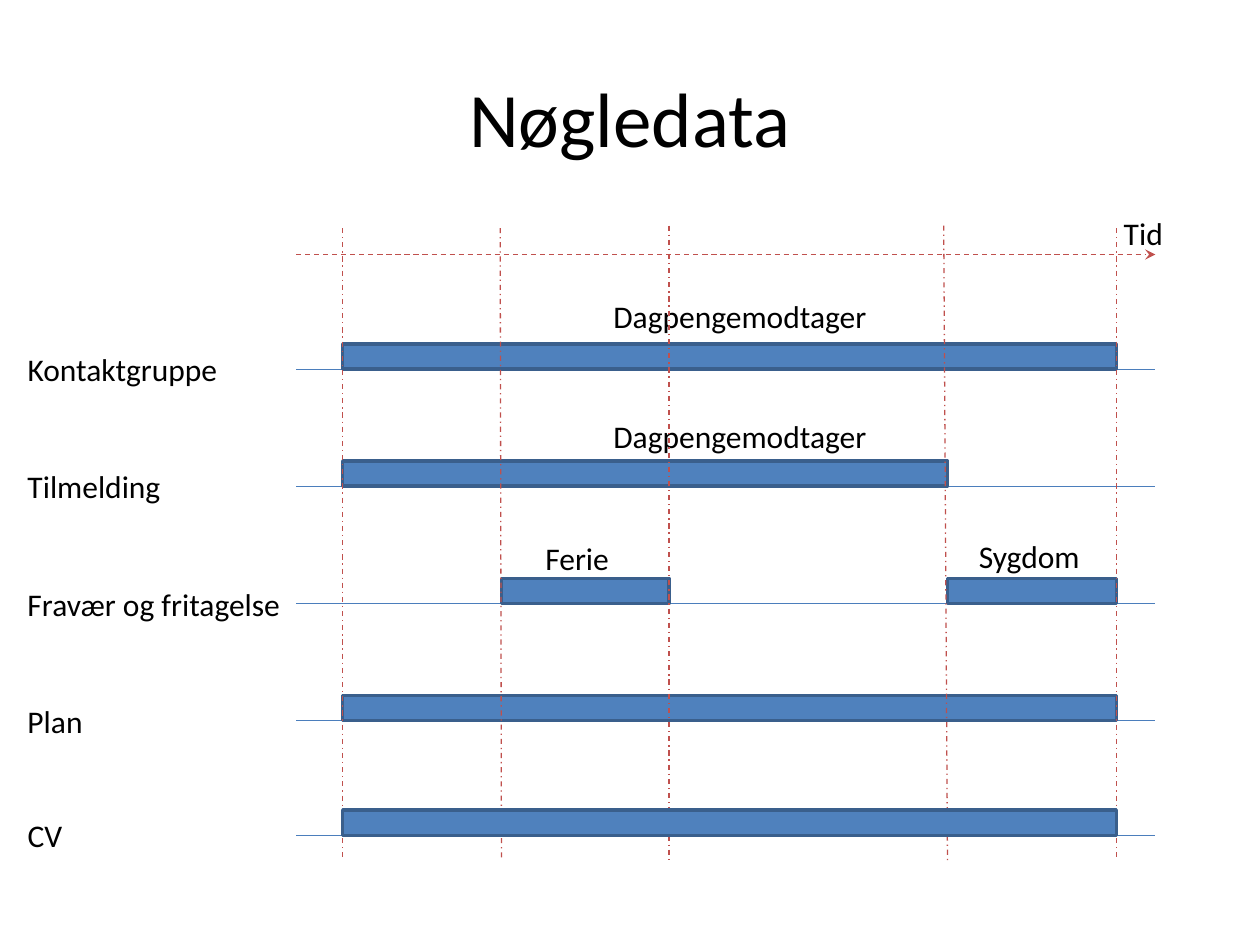
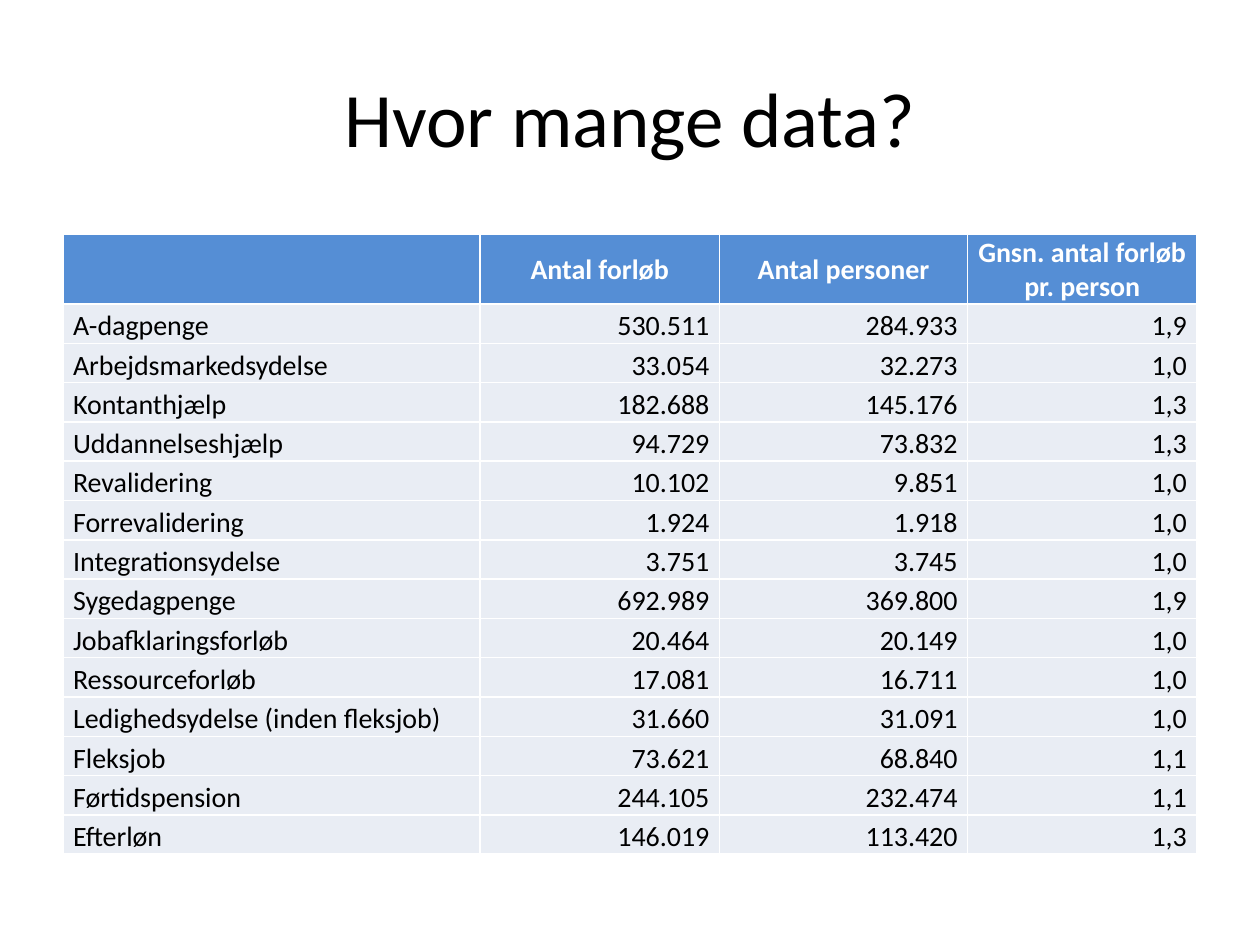
from dataclasses import dataclass

from lxml import etree
from pptx import Presentation
from pptx.dml.color import RGBColor
from pptx.enum.dml import MSO_LINE
from pptx.enum.shapes import MSO_CONNECTOR, MSO_SHAPE
from pptx.enum.text import MSO_ANCHOR, MSO_AUTO_SIZE, PP_ALIGN
from pptx.oxml.ns import qn
from pptx.util import Inches, Pt

LEFT, CENTER, RIGHT = PP_ALIGN.LEFT, PP_ALIGN.CENTER, PP_ALIGN.RIGHT
MIDDLE, BOTTOM = MSO_ANCHOR.MIDDLE, MSO_ANCHOR.BOTTOM
DASH, DASH_DOT = MSO_LINE.DASH, MSO_LINE.DASH_DOT
STRAIGHT, RECT = MSO_CONNECTOR.STRAIGHT, MSO_SHAPE.RECTANGLE
FIT = MSO_AUTO_SIZE.SHAPE_TO_FIT_TEXT
TITLE_ONLY = 5


@dataclass(frozen=True)
class Theme:
    font: str = "Calibri"
    ink: str = "000000"
    paper: str = "FFFFFF"
    bar: str = "4F81BD"
    edge: str = "3A5F8C"
    track: str = "4B7EBC"
    mark: str = "C0504D"
    head: str = "558ED5"
    body: str = "E9EDF4"
    title_pt: float = 44
    label_pt: float = 18
    cell_pt: float = 16
    thin: float = 0.75
    thick: float = 2


THEME = Theme()

# Boxes: left, top, width, height
TITLE_BOX = (0.5, 0.3, 9, 1.25)
TIME_BOX = (0.12, 1.65, 9.22, 5.18)
TABLE_BOX = (0.5, 1.86, 9, 4.83)

# Date marks, relative to the timeline box: top x, bottom x, top y
MARKS = [(2.6, 2.6, 0.16), (3.85, 3.86, 0.16), (5.19, 5.19, 0.14),
         (7.37, 7.4, 0.14), (8.74, 8.74, 0.16)]

# Rows: label, label width, nudge, bars (first mark, last mark),
# captions (text, x, rise above the track, width)
ROWS = [
    ("Kontaktgruppe", 1.72, 0, [(0, 4)],
     [("Dagpengemodtager", 4.65, 0.62, 2.24)]),
    ("Tilmelding", 1.27, 0, [(0, 3)],
     [("Dagpengemodtager", 4.65, 0.6, 2.24)]),
    ("Fravær og fritagelse", 2.23, 0, [(1, 2), (3, 4)],
     [("Ferie", 4.11, 0.56, 0.71), ("Sygdom", 7.55, 0.58, 1.01)]),
    ("Plan", 0.64, 0, [(0, 4)], []),
    ("CV", 0.48, -0.02, [(0, 4)], []),
]

HEADS = ["", "Antal forløb", "Antal personer", "Gnsn. antal forløb pr. person"]
COLS = [3.31, 1.9, 1.97, 1.82]
COUNTS = [
    ("A-dagpenge", "530.511", "284.933", "1,9"),
    ("Arbejdsmarkedsydelse", "33.054", "32.273", "1,0"),
    ("Kontanthjælp", "182.688", "145.176", "1,3"),
    ("Uddannelseshjælp", "94.729", "73.832", "1,3"),
    ("Revalidering", "10.102", "9.851", "1,0"),
    ("Forrevalidering", "1.924", "1.918", "1,0"),
    ("Integrationsydelse", "3.751", "3.745", "1,0"),
    ("Sygedagpenge", "692.989", "369.800", "1,9"),
    ("Jobafklaringsforløb", "20.464", "20.149", "1,0"),
    ("Ressourceforløb", "17.081", "16.711", "1,0"),
    ("Ledighedsydelse (inden fleksjob)", "31.660", "31.091", "1,0"),
    ("Fleksjob", "73.621", "68.840", "1,1"),
    ("Førtidspension", "244.105", "232.474", "1,1"),
    ("Efterløn", "146.019", "113.420", "1,3"),
]


def rgb(code):
    return RGBColor.from_string(code)


def write(frame, text, size, color=THEME.ink, align=LEFT, bold=False):
    frame.text = text
    para = frame.paragraphs[0]
    para.alignment = align
    for run in para.runs:
        font = run.font
        font.name, font.size, font.bold = THEME.font, Pt(size), bold
        font.color.rgb = rgb(color)


def add_title(slide, text):
    title = slide.shapes.title
    title.left, title.top, title.width, title.height = map(Inches, TITLE_BOX)
    write(title.text_frame, text, THEME.title_pt, align=CENTER)
    title.text_frame.vertical_anchor = MIDDLE


def add_label(slide, text, x, y, width):
    box = slide.shapes.add_textbox(*map(Inches, (x, y, width, 0.4)))
    write(box.text_frame, text, THEME.label_pt)
    box.text_frame.word_wrap = False
    box.text_frame.auto_size = FIT


def add_line(slide, start, end, color, dash=None, arrow=False):
    line = slide.shapes.add_connector(STRAIGHT, *map(Inches, start + end))
    line.line.color.rgb = rgb(color)
    line.line.width = Pt(THEME.thin)
    if dash:
        line.line.dash_style = dash
    props = line._element.spPr
    if arrow:
        etree.SubElement(props.find(qn("a:ln")), qn("a:tailEnd"), type="stealth")
    etree.SubElement(props, qn("a:effectLst"))


def add_bar(slide, x, y, width, height):
    bar = slide.shapes.add_shape(RECT, *map(Inches, (x, y, width, height)))
    bar.shadow.inherit = False
    bar.fill.solid()
    bar.fill.fore_color.rgb = rgb(THEME.bar)
    bar.line.color.rgb = rgb(THEME.edge)
    bar.line.width = Pt(THEME.thick)


def add_row(slide, box, base, row):
    left, _, width, _ = box
    label, span, _, bars, notes = row
    thick = 0.2
    add_line(slide, (left + 2.23, base), (left + width - 0.17, base), THEME.track)
    add_label(slide, label, left, base - thick, span)
    for first, last in bars:
        start, end = MARKS[first][1], MARKS[last][1]
        add_bar(slide, left + start, base - thick, end - start, thick)
    for text, x, rise, wide in notes:
        add_label(slide, text, left + x, base - rise, wide)


def add_timeline(slide, box):
    left, top, width, height = box
    pitch = 0.93
    bases = [top + 1.28 + i * pitch + row[2] for i, row in enumerate(ROWS)]
    for base, row in zip(bases[:-1], ROWS):
        add_row(slide, box, base, row)
    # Time axis
    axis = top + 0.37
    add_line(slide, (left + 2.23, axis), (left + width - 0.17, axis),
             THEME.mark, DASH, arrow=True)
    add_label(slide, "Tid", left + width - 0.52, top, 0.52)
    # Date marks, which the last row covers
    for upper, lower, drop in MARKS:
        add_line(slide, (left + upper, top + drop), (left + lower, top + height),
                 THEME.mark, DASH_DOT)
    add_row(slide, box, bases[-1], ROWS[-1])


def style_cell(cell, fill, insets, anchor):
    props = cell._tc.get_or_add_tcPr()
    for side in ("lnL", "lnR", "lnT", "lnB"):
        edge = etree.SubElement(props, qn("a:" + side), w=str(Pt(1)))
        paint = etree.SubElement(edge, qn("a:solidFill"))
        etree.SubElement(paint, qn("a:srgbClr"), val=THEME.paper)
    cell.fill.solid()
    cell.fill.fore_color.rgb = rgb(fill)
    (cell.margin_left, cell.margin_top,
     cell.margin_right, cell.margin_bottom) = map(Inches, insets)
    cell.vertical_anchor = anchor


def add_counts(slide, box):
    frame = slide.shapes.add_table(len(COUNTS) + 1, len(COLS), *map(Inches, box))
    table = frame.table
    table.horz_banding = False
    for col, width in zip(table.columns, COLS):
        col.width = Inches(width)
    for i, row in enumerate(table.rows):
        row.height = Inches(0.27 if i else 0.48)
    frame.height = Inches(box[3])
    # Header row
    for j, text in enumerate(HEADS):
        cell = table.cell(0, j)
        style_cell(cell, THEME.head, (0.01, 0.01, 0.01, 0), MIDDLE)
        write(cell.text_frame, text, THEME.cell_pt, THEME.paper, CENTER, True)
    # Body rows
    for i, record in enumerate(COUNTS, 1):
        for j, text in enumerate(record):
            cell = table.cell(i, j)
            style_cell(cell, THEME.body, (0.08, 0.04, 0.08, 0), BOTTOM)
            write(cell.text_frame, text, THEME.cell_pt, align=RIGHT if j else LEFT)


def main():
    deck = Presentation()
    deck.slide_width, deck.slide_height = Inches(10), Inches(7.5)
    pages = [("Nøgledata", add_timeline, TIME_BOX),
             ("Hvor mange data?", add_counts, TABLE_BOX)]
    for title, draw, box in pages:
        slide = deck.slides.add_slide(deck.slide_layouts[TITLE_ONLY])
        add_title(slide, title)
        draw(slide, box)
    deck.save("out.pptx")


if __name__ == "__main__":
    main()
